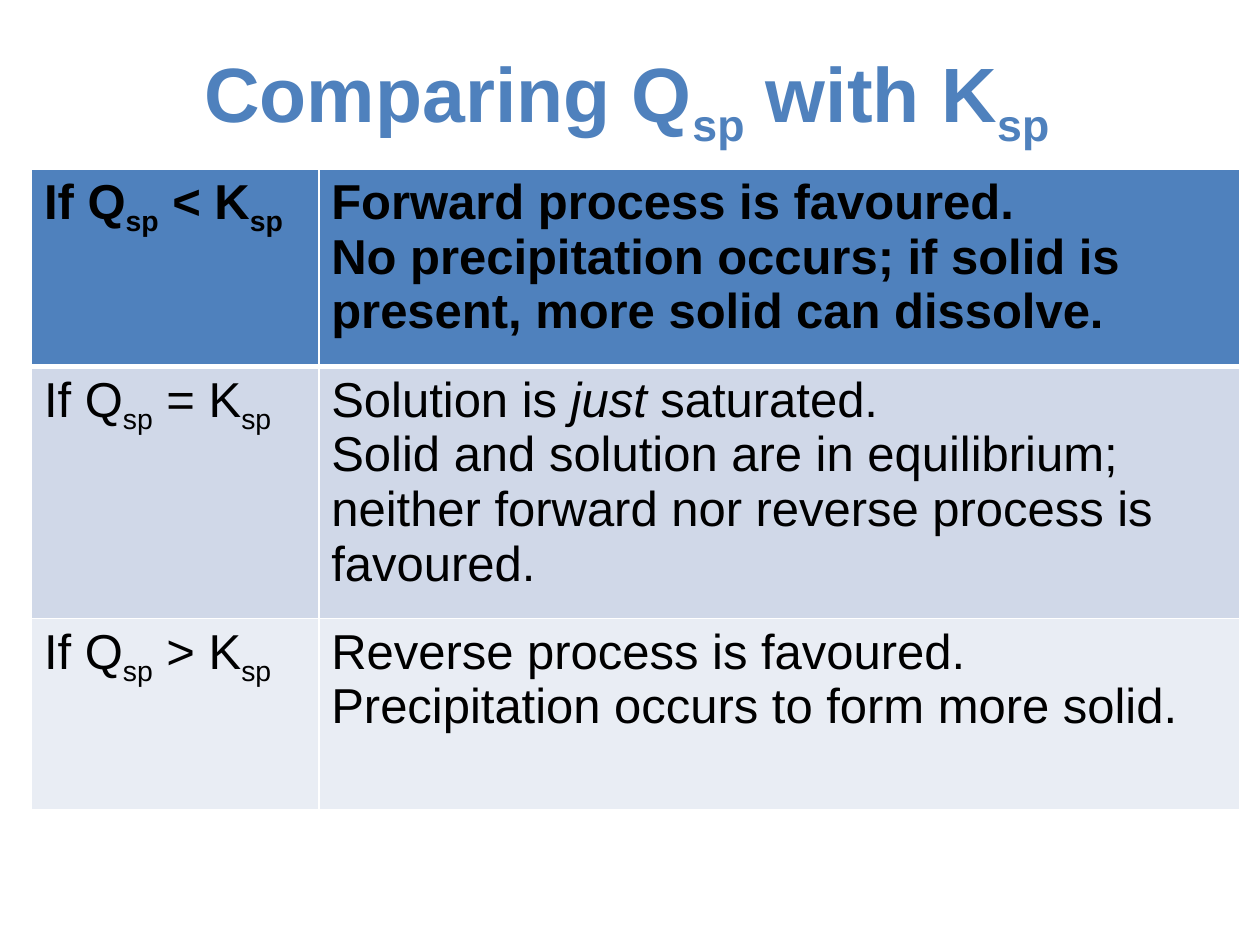
from lxml import etree
from pptx import Presentation
from pptx.dml.color import RGBColor
from pptx.enum.text import MSO_ANCHOR, PP_ALIGN
from pptx.oxml.ns import qn
from pptx.util import Inches, Pt

CENTER = PP_ALIGN.CENTER
MIDDLE = MSO_ANCHOR.MIDDLE
BLUE = RGBColor(0x4F, 0x81, 0xBD)
PALE = RGBColor(0xD0, 0xD8, 0xE8)
LIGHT = RGBColor(0xE9, 0xED, 0xF4)
BLACK = RGBColor(0, 0, 0)
WHITE = RGBColor(0xFF, 0xFF, 0xFF)
FONT = "Arial"
WIDE, HIGH = Inches(10), Inches(7.5)
COLS = (2.28, 7.31)
ROWS = (
    ("<", 1.57, BLUE, [
        [("Forward process is favoured.", "")],
        [("No precipitation occurs; if solid is present, "
          "more solid can dissolve.", "")]]),
    ("=", 2, PALE, [
        [("Solution is ", ""), ("just", "italic"), (" saturated.", "")],
        [("Solid and solution are in equilibrium; neither forward "
          "nor reverse process is favoured.", "")]]),
    (">", 1.52, LIGHT, [
        [("Reverse process is favoured.", "")],
        [("Precipitation occurs to form more solid.", "")]]),
)


def pair(start, link):
    """Return the runs that set Q and K, each with its subscript."""
    return [(f"{start}Q", ""), ("sp", "sub"), (f" {link} K", ""), ("sp", "sub")]


def write(frame, lines, size, color, bold, align=None):
    """Fill a text frame with paragraphs, run by run."""
    for i, runs in enumerate(lines):
        para = frame.add_paragraph() if i else frame.paragraphs[0]
        para.alignment = align
        for text, style in runs:
            run = para.add_run()
            run.text = text
            font = run.font
            font.name, font.size, font.bold = FONT, Pt(size), bold
            font.color.rgb = color
            if style == "italic":
                font.italic = True
            elif style == "sub":
                run._r.get_or_add_rPr().set("baseline", "-25000")


def edge(cell, sides):
    """Draw white cell borders from a map of side to point width."""
    props = cell._tc.get_or_add_tcPr()
    for i, (side, width) in enumerate(sides.items()):
        line = etree.Element(qn(f"a:ln{side}"), w=str(Pt(width)))
        fill = etree.SubElement(line, qn("a:solidFill"))
        etree.SubElement(fill, qn("a:srgbClr"), val=str(WHITE))
        props.insert(i, line)


def add_title(slide):
    """Add the centred heading."""
    box = slide.shapes.add_textbox(0, int(HIGH * 0.056), int(WIDE * 0.995),
                                   int(HIGH * 0.095))
    frame = box.text_frame
    frame.word_wrap = True
    frame.vertical_anchor = MIDDLE
    write(frame, [pair("Comparing ", "with")], 44, BLUE, True, CENTER)


def add_grid(slide):
    """Add the table of the three cases."""
    high = sum(row[1] for row in ROWS)
    table = slide.shapes.add_table(
        len(ROWS), len(COLS), Inches(0.25), Inches(1.34),
        Inches(sum(COLS)), Inches(high)).table
    for col, width in zip(table.columns, COLS):
        col.width = Inches(width)
    for i, (sign, tall, fill, lines) in enumerate(ROWS):
        table.rows[i].height = Inches(tall)
        sides = {"L": 1, "R": 1, "T": 3 if i == 1 else 1, "B": 1 if i else 3}
        for j, body in enumerate(([pair("If ", sign)], lines)):
            cell = table.cell(i, j)
            cell.fill.solid()
            cell.fill.fore_color.rgb = fill
            edge(cell, sides)
            write(cell.text_frame, body, 28, BLACK, i == 0)


def main():
    """Build and save the slide."""
    deck = Presentation()
    deck.slide_width, deck.slide_height = WIDE, HIGH
    slide = deck.slides.add_slide(deck.slide_layouts[6])
    add_title(slide)
    add_grid(slide)
    deck.save("out.pptx")


if __name__ == "__main__":
    main()
